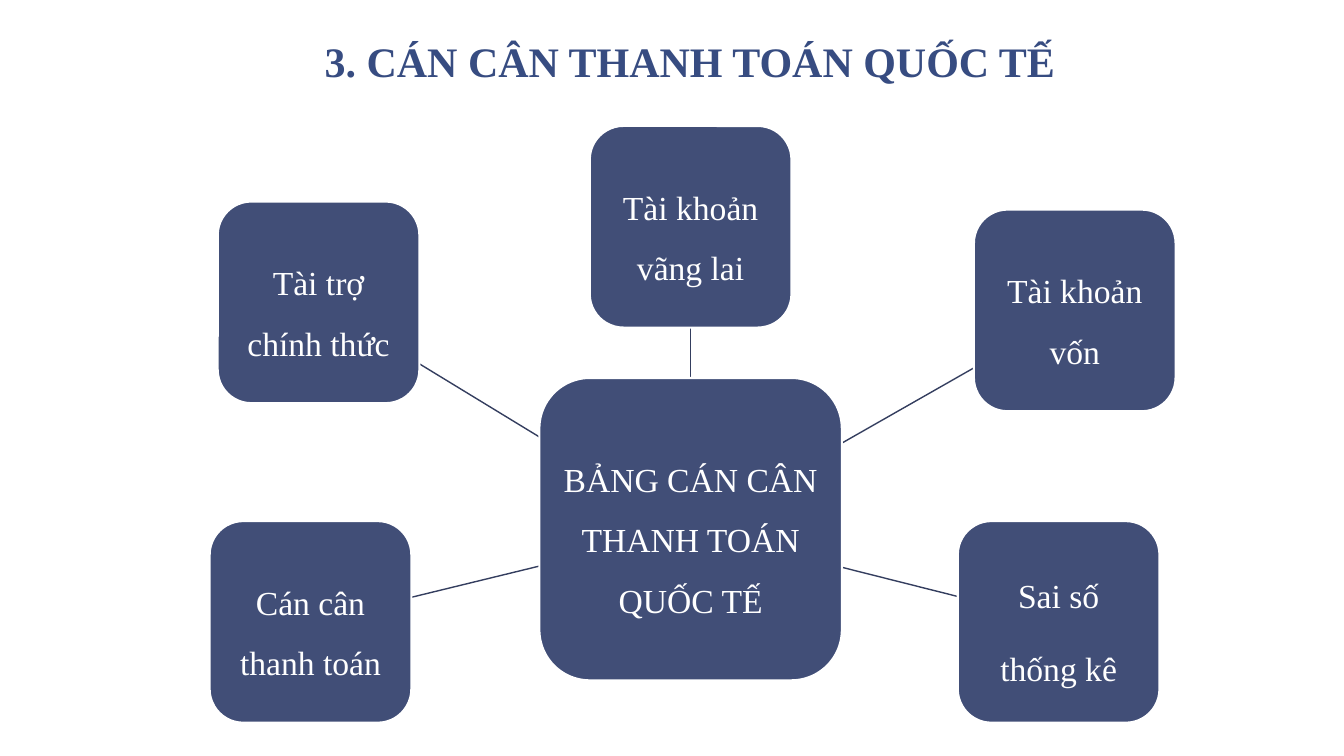
from dataclasses import dataclass

from lxml import etree
from pptx import Presentation
from pptx import util as u
from pptx.dml.color import RGBColor
from pptx.enum import shapes, text
from pptx.oxml import ns

EMU_PER_PX = 9144
FONT = "Times New Roman"
WHITE, NAVY, LINK, TITLE = "FFFFFF", "414E77", "343E5F", "374C81"


@dataclass(frozen=True)
class Box:
    left: int
    top: int
    size: int
    label: str

    @property
    def center(self) -> tuple[float, float]:
        return self.left + self.size / 2, self.top + self.size / 2


HUB = Box(535, 375, 300, "BẢNG CÁN CÂN THANH TOÁN QUỐC TẾ")
ACCOUNTS = [
    Box(585, 125, 200, "Tài khoản vãng lai"),
    Box(966, 208, 200, "Tài khoản vốn"),
    Box(950, 517, 200, "Sai số\nthống kê"),
    Box(208, 517, 200, "Cán cân thanh toán"),
    Box(216, 200, 200, "Tài trợ chính thức"),
]


def px(n: float) -> u.Emu:
    return u.Emu(round(n * EMU_PER_PX))


def rgb(color: str) -> RGBColor:
    return RGBColor.from_string(color)


def set_insets(tf, side: int, end: int) -> None:
    tf.margin_left = tf.margin_right = px(side)
    tf.margin_top = tf.margin_bottom = px(end)


def format_text(tf, size: int, color: str, bold: bool, after: int) -> None:
    tf.word_wrap = True
    for p in tf.paragraphs:
        p.alignment = text.PP_ALIGN.CENTER
        p.line_spacing = 1.5
        p.space_before = u.Pt(0)
        p.space_after = u.Pt(after)
        for r in p.runs:
            r.font.name = FONT
            r.font.size = u.Pt(size)
            r.font.bold = bold
            r.font.color.rgb = rgb(color)


def edge_point(box: Box, toward: Box) -> tuple[float, float]:
    (x, y), (tx, ty) = box.center, toward.center
    dx, dy = tx - x, ty - y
    scale = box.size / 2 / max(abs(dx), abs(dy))
    return x + dx * scale, y + dy * scale


def draw_link(s, start: Box, end: Box) -> None:
    points = (*edge_point(start, end), *edge_point(end, start))
    link = s.shapes.add_connector(
        shapes.MSO_CONNECTOR.STRAIGHT, *(px(n) for n in points))
    link.line.color.rgb = rgb(LINK)
    link.line.width = u.Pt(1)
    etree.SubElement(link._element.spPr, ns.qn("a:effectLst"))


def draw_box(s, box: Box) -> None:
    sp = s.shapes.add_shape(
        shapes.MSO_SHAPE.ROUNDED_RECTANGLE,
        px(box.left), px(box.top), px(box.size), px(box.size))
    sp.shadow.inherit = False
    sp.fill.solid()
    sp.fill.fore_color.rgb = rgb(NAVY)
    sp.line.color.rgb = rgb(WHITE)
    sp.line.width = u.Pt(1.5)
    tf = sp.text_frame
    tf.text = box.label
    tf.vertical_anchor = text.MSO_ANCHOR.MIDDLE
    set_insets(tf, 7, 7)
    format_text(tf, 24, WHITE, False, 9)


def draw_title(s, label: str) -> None:
    sp = s.shapes.title
    sp.left, sp.top, sp.width, sp.height = px(129), px(-33), px(1111), px(125)
    tf = sp.text_frame
    tf.text = label
    tf.auto_size = text.MSO_AUTO_SIZE.NONE
    tf.vertical_anchor = text.MSO_ANCHOR.BOTTOM
    set_insets(tf, 13, 7)
    format_text(tf, 30, TITLE, True, 0)


def main() -> None:
    prs = Presentation()
    prs.slide_width, prs.slide_height = px(1333), px(750)
    s = prs.slides.add_slide(prs.slide_layouts[5])
    draw_title(s, "3. CÁN CÂN THANH TOÁN QUỐC TẾ")
    for account in ACCOUNTS:
        draw_link(s, HUB, account)
    for box in [HUB, *ACCOUNTS]:
        draw_box(s, box)
    prs.save("out.pptx")


if __name__ == "__main__":
    main()
